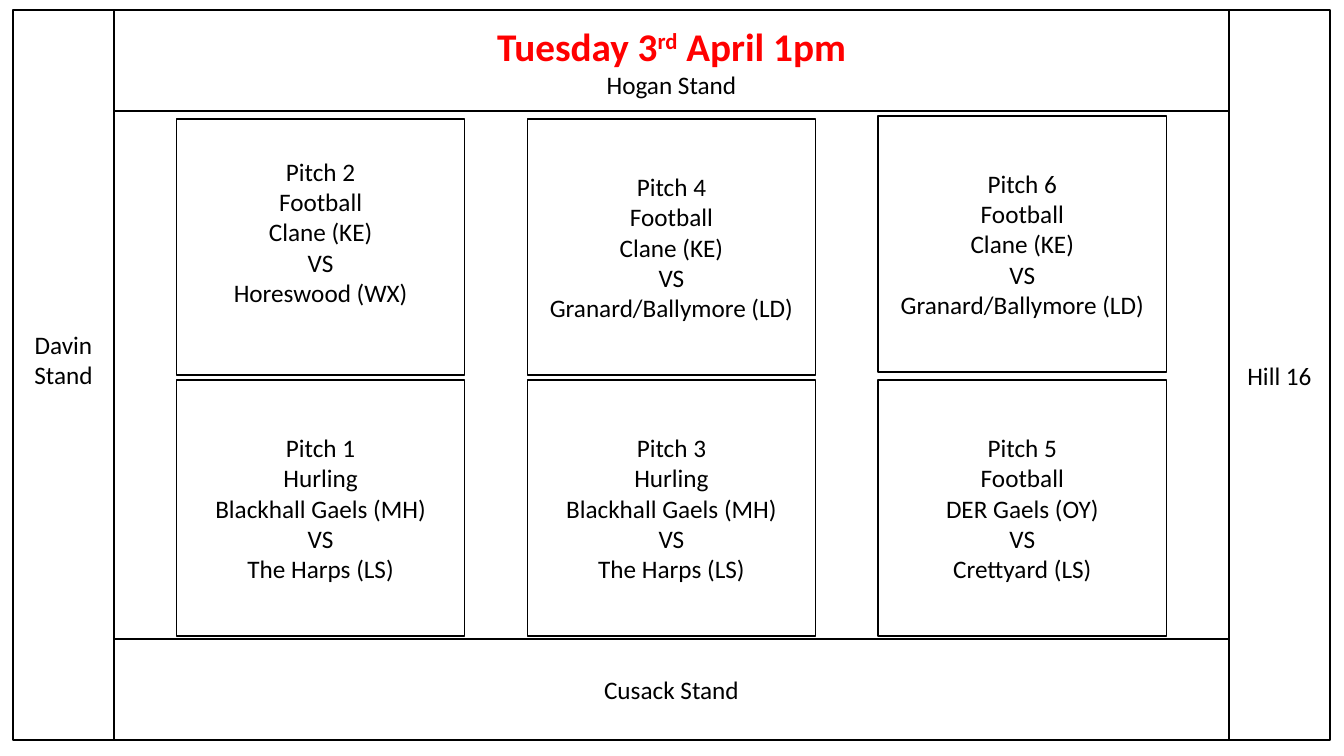
import pptx
import pptx.util
import pptx.dml.color
import pptx.enum.shapes
import pptx.enum.text

HEADING = [("Tuesday 3", False), ("rd", True), (" April 1pm", False)]
HOGAN = "Hogan Stand"
CUSACK = "Cusack Stand"
DAVIN = "Davin Stand"
HILL = "Hill 16"

PITCHES = [
    [
        ["Pitch 2", "Football", "Clane (KE)", "VS", "Horeswood (WX)"],
        ["Pitch 4", "Football", "Clane (KE)", "VS", "Granard/Ballymore (LD)"],
        ["Pitch 6", "Football", "Clane (KE)", "VS", "Granard/Ballymore (LD)"],
    ],
    [
        ["Pitch 1", "Hurling", "Blackhall Gaels (MH)", "VS", "The Harps (LS)"],
        ["Pitch 3", "Hurling", "Blackhall Gaels (MH)", "VS", "The Harps (LS)"],
        ["Pitch 5", "Football", "DER Gaels (OY)", "VS", "Crettyard (LS)"],
    ],
]
RAISED = {"Pitch 6": 0.03}
LIFTED_TEXT = {"Pitch 2": 0.3}

BLACK, RED = "000000", "FF0000"
WIDTH, HEIGHT = 13.33, 7.5
LEFT, TOP, STAND = 0.13, 0.1, 1
FIELD_WIDTH, FIELD_HEIGHT = 11.06, 7.24
FIELD_LEFT = LEFT + STAND
PITCH_LEFT, PITCH_TOP = 1.75, 1.18
PITCH_WIDTH, PITCH_HEIGHT = 2.86, 2.54
COLUMN_STEP, ROW_STEP = 3.48, 2.59


def color(value):
    return pptx.dml.color.RGBColor.from_string(value)


def style_paragraph(para, size=18, shade=BLACK, bold=False):
    para.alignment = pptx.enum.text.PP_ALIGN.CENTER
    para.font.name = "Calibri"
    para.font.size = pptx.util.Pt(size)
    para.font.bold = bold
    para.font.color.rgb = color(shade)


def outline(box, left, top, width, height, lift=0):
    box.left, box.top, box.width, box.height = (
        pptx.util.Inches(length) for length in (left, top, width, height)
    )
    box.fill.background()
    box.line.color.rgb = color(BLACK)
    box.line.width = pptx.util.Pt(1)
    frame = box.text_frame
    frame.word_wrap = True
    frame.auto_size = pptx.enum.text.MSO_AUTO_SIZE.NONE
    frame.vertical_anchor = pptx.enum.text.MSO_ANCHOR.MIDDLE
    frame.margin_bottom = pptx.util.Inches(0.05 + lift)


def add_box(page, lines, left, top, width, height, lift=0):
    box = page.shapes.add_shape(pptx.enum.shapes.MSO_SHAPE.RECTANGLE, 0, 0, 0, 0)
    box.shadow.inherit = False
    outline(box, left, top, width, height, lift)
    box.text_frame.text = "\n".join(lines)
    for para in box.text_frame.paragraphs:
        style_paragraph(para)


def add_heading(page):
    box = page.shapes.title
    outline(box, FIELD_LEFT, TOP, FIELD_WIDTH, STAND)
    para = box.text_frame.paragraphs[0]
    style_paragraph(para, 28, RED, True)
    for text, raised in HEADING:
        span = para.add_run()
        span.text = text
        if raised:
            span._r.get_or_add_rPr().set("baseline", "30000")
    stand = box.text_frame.add_paragraph()
    stand.text = HOGAN
    style_paragraph(stand)


def main():
    deck = pptx.Presentation()
    deck.slide_width = pptx.util.Inches(WIDTH)
    deck.slide_height = pptx.util.Inches(HEIGHT)
    page = deck.slides.add_slide(deck.slide_layouts.get_by_name("Title Only"))

    add_heading(page)
    add_box(page, [DAVIN], LEFT, TOP, STAND, FIELD_HEIGHT, lift=0.3)
    add_box(page, [HILL], FIELD_LEFT + FIELD_WIDTH, TOP, STAND, FIELD_HEIGHT)
    add_box(page, [CUSACK], FIELD_LEFT, TOP + FIELD_HEIGHT - STAND, FIELD_WIDTH, STAND)

    for row, pitches in enumerate(PITCHES):
        for column, lines in enumerate(pitches):
            name = lines[0]
            left = PITCH_LEFT + column * COLUMN_STEP
            top = PITCH_TOP + row * ROW_STEP - RAISED.get(name, 0)
            add_box(page, lines, left, top, PITCH_WIDTH, PITCH_HEIGHT,
                    LIFTED_TEXT.get(name, 0))

    deck.save("out.pptx")


if __name__ == "__main__":
    main()
